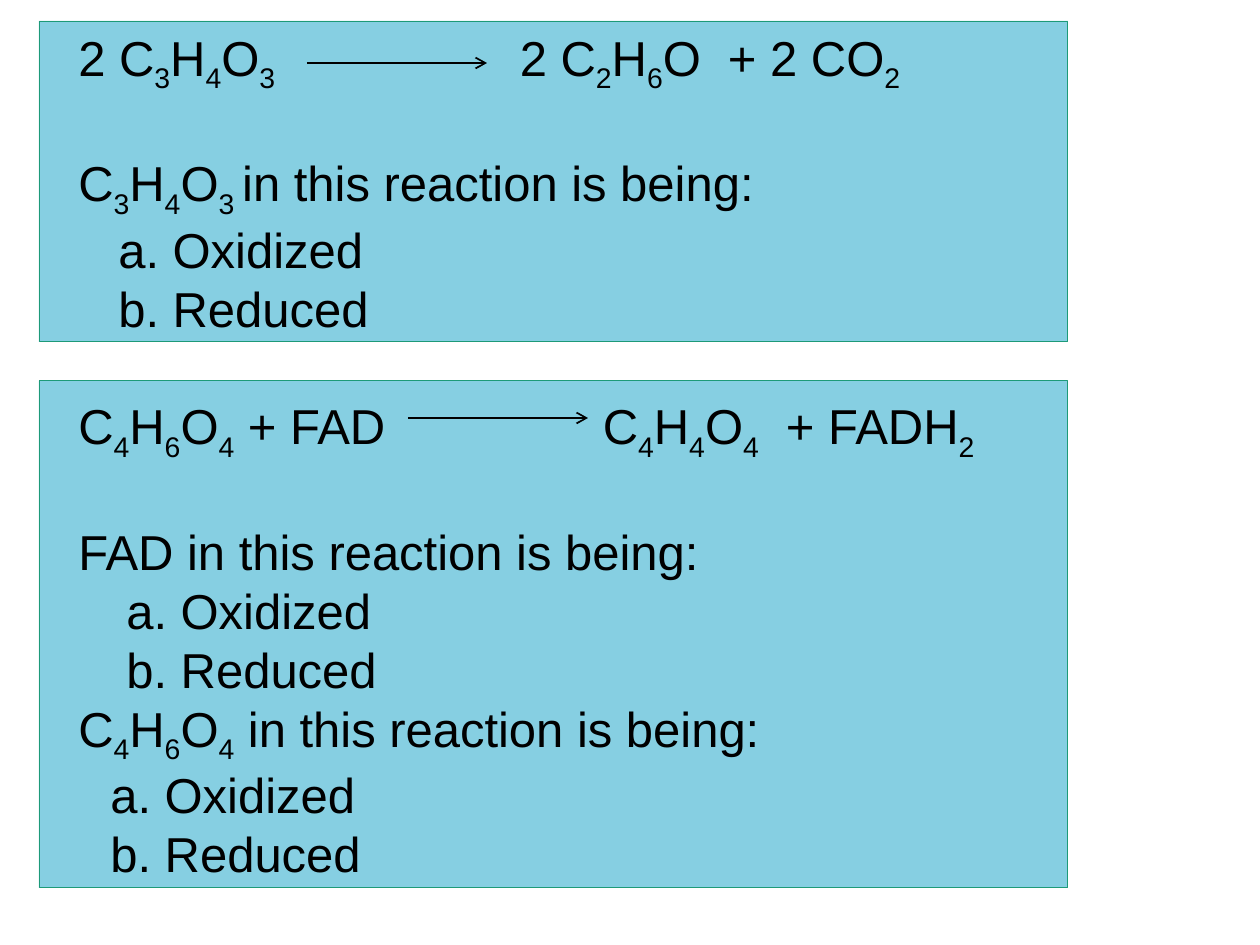
from pptx import Presentation
from pptx.dml.color import RGBColor
from pptx.enum.shapes import MSO_CONNECTOR, MSO_SHAPE
from pptx.oxml.ns import qn
from pptx.util import Pt
from lxml.etree import SubElement

PX = 7257.14  # EMU per px, at 126 px to the inch
PANEL_FILL = RGBColor(0x86, 0xCF, 0xE2)
PANEL_EDGE = RGBColor(0x1D, 0x9A, 0x78)
BLACK = RGBColor(0, 0, 0)
FONT_SIZE = Pt(28)
BLANK_LINE = 33.5  # points

# Panels: top, height; arrows: left, y
PANELS = [(381, 507), (21, 321)]
ARROWS = [(307, 63), (408, 418)]
ARROW_LENGTH = 180

# Lines: pieces of text with _subscripts_, indent px, gap above in blank lines.
# A number among the pieces is the room for an arrow: one space widened by so many px.
ANSWERS = ["a. Oxidized", "b. Reduced"]
QUIZ = [
    (["2 C_3_H_4_O_3_", 231, "2 C_2_H_6_O  + 2 CO_2_"], 0, 0),
    (["C_3_H_4_O_3 _in this reaction is being:"], 0, 1),
    *[([answer], 40, 0) for answer in ANSWERS],
    (["C_4_H_6_O_4_ + FAD", 204, "C_4_H_4_O_4_  + FADH_2_"], 0, 1),
    (["FAD in this reaction is being:"], 0, 1),
    *[([answer], 48, 0) for answer in ANSWERS],
    (["C_4_H_6_O_4_ in this reaction is being:"], 0, 0),
    *[([answer], 32, 0) for answer in ANSWERS],
]


def px(length):
    return round(length * PX)


def add_panel(slide, top, height):
    panel = slide.shapes.add_shape(
        MSO_SHAPE.RECTANGLE, px(39), px(top), px(1029), px(height))
    panel.shadow.inherit = False
    panel.fill.solid()
    panel.fill.fore_color.rgb = PANEL_FILL
    panel.line.color.rgb = PANEL_EDGE
    panel.line.width = Pt(0.5)


def add_run(paragraph, text, **attributes):
    run = paragraph.add_run()
    run.text = text
    run.font.name = "Arial"
    run.font.size = FONT_SIZE
    run.font.color.rgb = BLACK
    for name, value in attributes.items():
        run.font._element.set(name, value)


def add_formula(paragraph, text):
    """Write the text; every second part between underscores is a subscript."""
    for index, part in enumerate(text.split("_")):
        if part and index % 2:
            add_run(paragraph, part, baseline="-25000")
        elif part:
            add_run(paragraph, part)


def add_quiz(slide):
    frame = slide.shapes.add_textbox(px(66), px(21), px(1097), px(866)).text_frame
    frame.word_wrap = True
    for index, (pieces, indent, gap) in enumerate(QUIZ):
        paragraph = frame.paragraphs[0] if index == 0 else frame.add_paragraph()
        paragraph.space_before = Pt(gap * BLANK_LINE)
        properties = paragraph._p.get_or_add_pPr()
        properties.set("marL", str(px(indent)))
        properties.set("indent", "0")
        for piece in pieces:
            if isinstance(piece, int):
                spacing = round(Pt(100) * px(piece) / Pt(1) ** 2)
                add_run(paragraph, " ", spc=str(spacing))
            else:
                add_formula(paragraph, piece)


def add_reaction_arrow(slide, left, y):
    arrow = slide.shapes.add_connector(
        MSO_CONNECTOR.STRAIGHT, px(left), px(y), px(left + ARROW_LENGTH), px(y))
    arrow.line.color.rgb = BLACK
    arrow.line.width = Pt(1)
    SubElement(arrow.line._get_or_add_ln(), qn("a:tailEnd"), type="arrow")
    SubElement(arrow._element.spPr, qn("a:effectLst"))


def main():
    presentation = Presentation()
    presentation.slide_width = px(1260)
    presentation.slide_height = px(945)
    slide = presentation.slides.add_slide(presentation.slide_layouts[6])

    # Background panels, one per reaction
    for top, height in PANELS:
        add_panel(slide, top, height)

    # Questions and reaction arrows
    add_quiz(slide)
    for left, y in ARROWS:
        add_reaction_arrow(slide, left, y)

    presentation.save("out.pptx")


if __name__ == "__main__":
    main()
